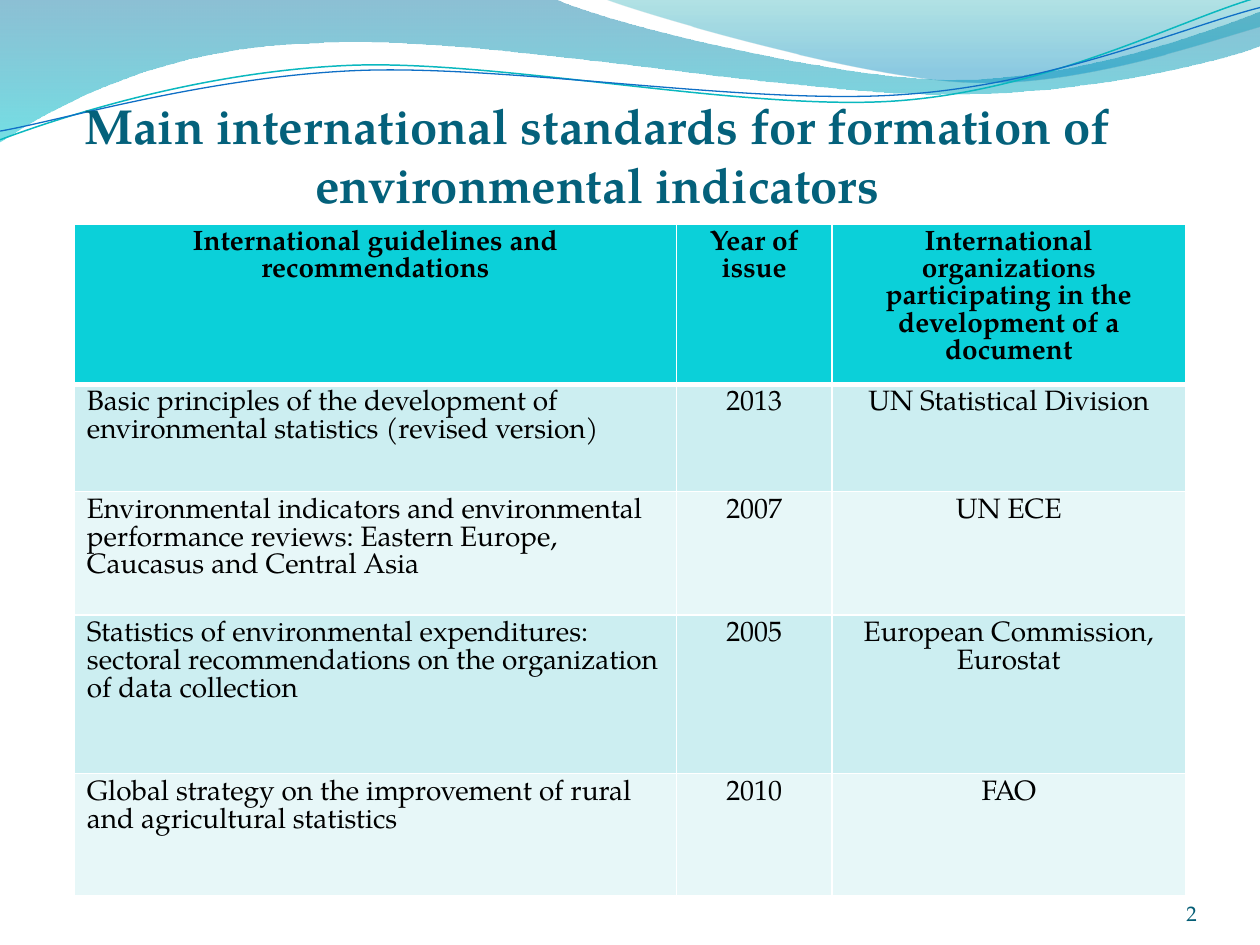
"""Build the slide on international standards for environmental indicators."""
import pptx
import pptx.dml.color
import pptx.enum.text
import pptx.oxml
import pptx.oxml.ns
import pptx.util

Pt = pptx.util.Pt
ALIGN = pptx.enum.text.PP_ALIGN
FONT = "TeX Gyre Pagella"
NAMESPACE = pptx.oxml.ns.nsdecls("a")

TITLE = "Main international standards for formation of environmental indicators"
PAGE_NUMBER = "2"
STANDARDS = [
    ("International guidelines and recommendations", "Year of issue",
     "International organizations participating in the development of a document"),
    ("Basic principles of the development of environmental statistics (revised version)",
     "2013", "UN Statistical Division"),
    ("Environmental indicators and environmental performance reviews: "
     "Eastern Europe, Caucasus and Central Asia", "2007", "UN ECE"),
    ("Statistics of environmental expenditures: sectoral recommendations "
     "on the organization of data collection", "2005", "European Commission, Eurostat"),
    ("Global strategy on the improvement of rural and agricultural statistics",
     "2010", "FAO"),
]
COLUMN_WIDTHS = [344, 89, 202]
ROW_HEIGHTS = [91.5, 61.2, 70.5, 90.7, 69.8]
HEADER_FILL, BAND_FILLS = "0BD0D9", ["CCEEF1", "E7F7F8"]

WAVES = [
    ([(0, 0), (316.8, -0.7), (342.7, 12.2, 478.1, 45.4, 545.8, 45.4),
      (614.2, 45.4, 689.8, 18.7, 720, 6.5), (720.7, 25.9),
      (707.8, 31.7, 626.4, 54.7, 537.1, 54), (447.8, 54, 275, 20.2, 185, 24.5),
      (92.9, 25.9, 33.1, 59.8, -0.7, 81.4)],
     [(0, "0074A1", 45), (100, "00C6CF", 55)]),
    ([(344.9, -0.7), (366.5, 7.9, 491, 44.6, 553.7, 46.8),
      (616.3, 49.7, 691.9, 23, 720, 15.1), (720, 0)],
     [(0, "00A1A9", 30), (80, "008BBF", 45)]),
]
RIPPLES = [
    ([(0, 79.9), (34.6, 67, 113.8, 41, 199.4, 37.4),
      (284.4, 33.8, 427, 64.1, 513.4, 57.6), (599.8, 51.1, 675.4, 10.8, 718.6, -1.4)],
     "0AB8BF", 0.85),
    ([(0, 74.9), (33.8, 69.1, 118.1, 43.9, 203.8, 40.3),
      (290.2, 36.7, 429.8, 60.5, 516.2, 54), (601.9, 48.2, 677.5, 15.1, 720, 4.3)],
     "0F6FC6", 0.75),
]


def rgb(color):
    return pptx.dml.color.RGBColor.from_string(color)


def add_outline(slide, segments, close):
    points = [(round(x * 100), round(y * 100)) for segment in segments
              for x, y in zip(segment[::2], segment[1::2])]
    builder = slide.shapes.build_freeform(*points[0], scale=Pt(1) / 100)
    builder.add_line_segments(points[1:], close=close)
    outline = builder.convert_to_shape()
    outline.shadow.inherit = False
    lines = iter(list(outline._element.iter(pptx.oxml.ns.qn("a:lnTo"))))
    for segment in segments[1:]:
        line = next(lines)
        if len(segment) == 6:
            curve = pptx.oxml.parse_xml(f"<a:cubicBezTo {NAMESPACE}/>")
            line.addprevious(curve)
            for part in (line, next(lines), next(lines)):
                curve.append(part[0])
                part.getparent().remove(part)
    return outline


def add_wave(slide, segments, stops):
    wave = add_outline(slide, segments, True)
    wave.line.fill.background()
    wave.fill.gradient()
    wave.fill.gradient_angle = 270
    stop_list = next(wave._element.iter(pptx.oxml.ns.qn("a:gsLst")))
    for old_stop in list(stop_list):
        stop_list.remove(old_stop)
    for position, color, opacity in stops:
        stop_list.append(pptx.oxml.parse_xml(
            f'<a:gs {NAMESPACE} pos="{position * 1000}"><a:srgbClr val="{color}">'
            f'<a:alpha val="{opacity * 1000}"/></a:srgbClr></a:gs>'))


def add_ripple(slide, segments, color, width):
    ripple = add_outline(slide, segments, False)
    ripple.fill.background()
    ripple.line.color.rgb = rgb(color)
    ripple.line.width = Pt(width)


def write(frame, text, size, color, align, bold=False):
    paragraph = frame.paragraphs[0]
    paragraph.alignment = align
    run = paragraph.add_run()
    run.text = text
    run.font.name, run.font.size, run.font.bold = FONT, Pt(size), bold
    run.font.color.rgb = rgb(color)
    return paragraph


def add_label(slide, box, text, size, color, align, bold=False):
    frame = slide.shapes.add_textbox(*map(Pt, box)).text_frame
    frame.word_wrap = True
    frame.vertical_anchor = pptx.enum.text.MSO_ANCHOR.BOTTOM
    frame.margin_left = frame.margin_top = frame.margin_right = frame.margin_bottom = 0
    write(frame, text, size, color, align, bold)


def set_borders(cell, widths):
    properties = cell._tc.get_or_add_tcPr()
    for index, (side, width) in enumerate(zip("LRTB", widths)):
        properties.insert(index, pptx.oxml.parse_xml(
            f'<a:ln{side} {NAMESPACE} w="{Pt(width)}"><a:solidFill>'
            f'<a:srgbClr val="FFFFFF"/></a:solidFill></a:ln{side}>'))


def add_standards(slide):
    table = slide.shapes.add_table(
        len(STANDARDS), len(COLUMN_WIDTHS), Pt(42.5), Pt(128.2),
        Pt(sum(COLUMN_WIDTHS)), Pt(sum(ROW_HEIGHTS))).table
    for column, width in zip(table.columns, COLUMN_WIDTHS):
        column.width = Pt(width)
    for r, (entries, height) in enumerate(zip(STANDARDS, ROW_HEIGHTS)):
        table.rows[r].height = Pt(height)
        header = r == 0
        for c, entry in enumerate(entries):
            cell = table.cell(r, c)
            cell.fill.solid()
            cell.fill.fore_color.rgb = rgb(HEADER_FILL if header else BAND_FILLS[(r - 1) % 2])
            set_borders(cell, (1, 1, 3 if r == 1 else 1, 3 if header else 1))
            align = ALIGN.CENTER if header or c else ALIGN.LEFT
            paragraph = write(cell.text_frame, entry, 16, "000000", align, header)
            paragraph.line_spacing = Pt(15.5 if header else 16)


def main():
    deck = pptx.Presentation()
    deck.slide_width, deck.slide_height = Pt(720), Pt(540)
    slide = deck.slides.add_slide(deck.slide_layouts[6])
    for wave in WAVES:
        add_wave(slide, *wave)
    for ripple in RIPPLES:
        add_ripple(slide, *ripple)
    add_label(slide, (14.4, 31.7, 653.8, 90), TITLE, 28, "04617B", ALIGN.CENTER, True)
    add_label(slide, (624.2, 500.4, 59.8, 28.8), PAGE_NUMBER, 12, "045D75", ALIGN.RIGHT)
    add_standards(slide)
    deck.save("out.pptx")


if __name__ == "__main__":
    main()
